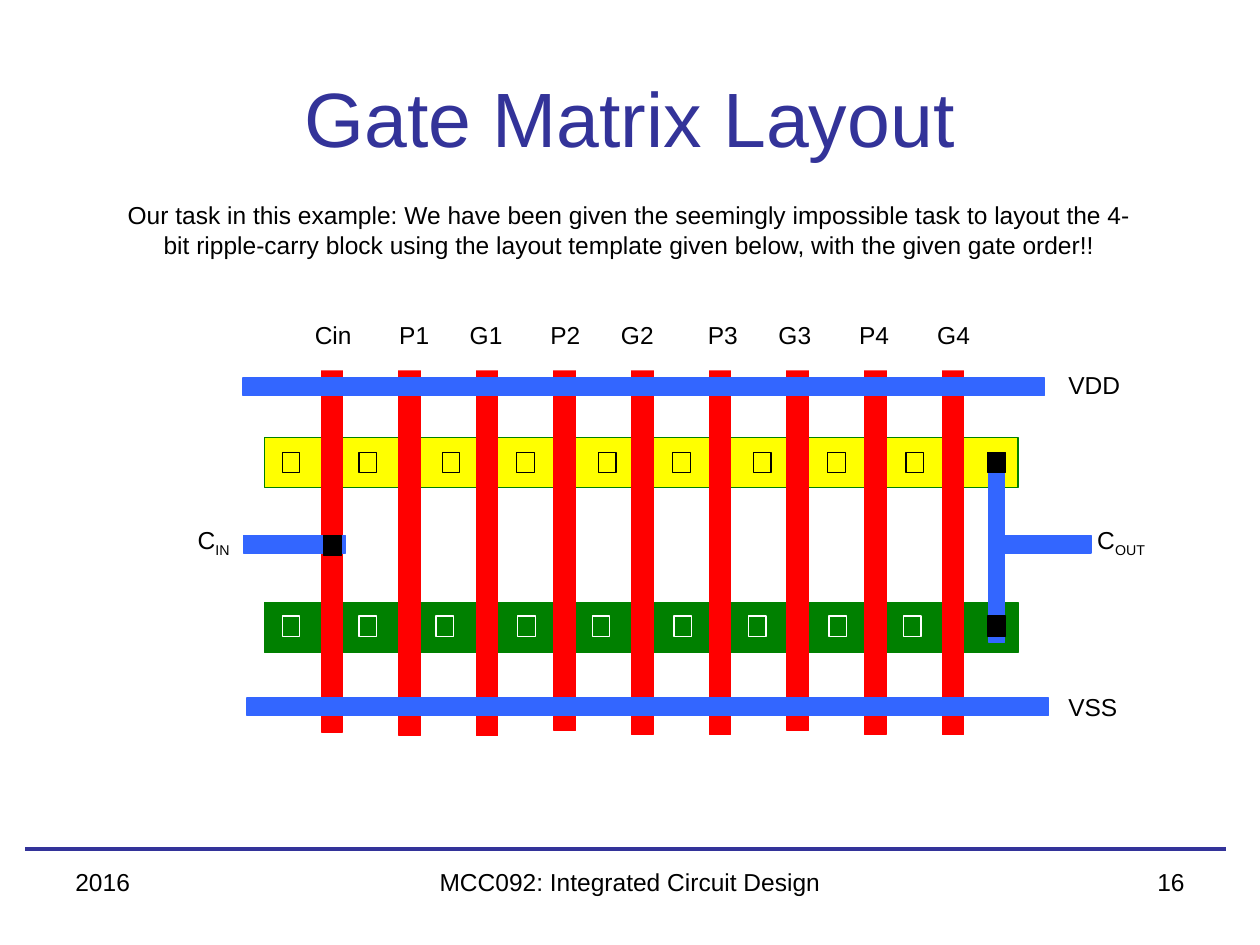
from dataclasses import dataclass

from lxml import etree
from pptx import Presentation
from pptx.dml.color import RGBColor
from pptx.enum import shapes, text
from pptx.oxml.ns import qn
from pptx.util import Inches, Pt

COLS, ROWS = 100, 75
NAVY, BLUE, RED, GREEN = "333399", "3366FF", "FF0000", "008000"
YELLOW, BLACK, WHITE = "FFFF00", "000000", "FFFFFF"

prs = Presentation()
prs.slide_width, prs.slide_height = Inches(10), Inches(7.5)
s = prs.slides.add_slide(prs.slide_layouts[6])


@dataclass
class Box:
    x: float
    y: float
    w: float
    h: float
    fill: str | None = None
    line: str | None = None


@dataclass
class Label:
    x: float
    y: float
    w: float
    h: float
    words: str
    sub: str = ""
    size: int = 14
    color: str = BLACK
    align: text.PP_ALIGN = text.PP_ALIGN.LEFT
    anchor: text.MSO_ANCHOR = text.MSO_ANCHOR.TOP


def rgb(value: str) -> RGBColor:
    return RGBColor.from_string(value)


def col(n: float) -> int:
    return round(prs.slide_width * n / COLS)


def row(n: float) -> int:
    return round(prs.slide_height * n / ROWS)


def draw_box(b: Box) -> None:
    sp = s.shapes.add_shape(shapes.MSO_SHAPE.RECTANGLE, col(b.x), row(b.y), col(b.w), row(b.h))
    sp.shadow.inherit = False
    if b.fill:
        sp.fill.solid()
        sp.fill.fore_color.rgb = rgb(b.fill)
    else:
        sp.fill.background()
    if b.line:
        sp.line.color.rgb = rgb(b.line)
        sp.line.width = Pt(0.75)
    else:
        sp.line.fill.background()


def draw_label(b: Label):
    sp = s.shapes.add_textbox(col(b.x), row(b.y), col(b.w), row(b.h))
    tf = sp.text_frame
    tf.word_wrap = True
    tf.vertical_anchor = b.anchor
    p = tf.paragraphs[0]
    p.text = b.words
    p.alignment = b.align
    if b.sub:
        r = p.add_run()
        r.text = b.sub
        r._r.get_or_add_rPr().set("baseline", "-25000")
    for r in p.runs:
        r.font.name = "Arial"
        r.font.size = Pt(b.size)
        r.font.color.rgb = rgb(b.color)
    return sp


def set_tabs(sp, stops: tuple[float, ...]) -> None:
    pPr = sp.text_frame.paragraphs[0]._p.get_or_add_pPr()
    tabs = etree.SubElement(pPr, qn("a:tabLst"))
    for stop in stops:
        etree.SubElement(tabs, qn("a:tab"), pos=str(col(stop)), algn="l")


def draw_rule(x1: float, x2: float, y: float) -> None:
    line = s.shapes.add_connector(shapes.MSO_CONNECTOR.STRAIGHT, col(x1), row(y), col(x2), row(y))
    line.line.color.rgb = rgb(NAVY)
    line.line.width = Pt(2.25)
    etree.SubElement(line._element.spPr, qn("a:effectLst"))


P_ROW, N_ROW = 35.9, 48.9
P_CONTACTS = (22.4, 28.5, 35.1, 41, 47.5, 53.4, 59.8, 65.7, 71.9)
N_CONTACTS = (22.4, 28.5, 34.6, 41.1, 47, 53.5, 59.4, 65.8, 71.7)
GATE_TOPS = (28.6, 28.9, 28.9, 28.5, 28.8, 28.8, 28.5, 28.8, 28.8)
GATE_NAMES = ("Cin", "P1", "G1", "P2", "G2", "P3", "G3", "P4", "G4")
GATE_TABS = (6.7, 12.3, 18.7, 24.3, 31.2, 36.8, 43.2, 49.4)
CENTER, RIGHT = text.PP_ALIGN.CENTER, text.PP_ALIGN.RIGHT


def contact(x: float, y: float, line: str, fill: str | None = None) -> Box:
    return Box(x, y, 1.4, 1.6, fill, line)


def wire(x: float, y: float, w: float, h: float = 1.4) -> Box:
    return Box(x, y, w, h, BLUE, BLUE)


diffusions = [Box(21, y, 59.8, 4, fill, GREEN) for y, fill in ((34.7, YELLOW), (47.8, GREEN))]
gates = [Box(25.5 + 6.16 * i, y, 1.7, 29.5, RED, RED) for i, y in enumerate(GATE_TOPS)]
rails = [wire(19.3, 30, 63.6), wire(19.6, 55.4, 63.6), wire(19.3, 42.5, 8.1)]
header = Box(24, 24.9, 65.4, 4.5, WHITE)
output = [wire(78.5, 42.5, 8.1), wire(78.5, 35.9, 1.2, 15.1)]
joined = [contact(x, y, BLACK, BLACK) for x, y in ((78.4, P_ROW), (25.7, 42.5), (78.4, N_ROW))]
p_contacts = [contact(x, P_ROW, BLACK) for x in P_CONTACTS]
n_contacts = [contact(x, N_ROW, WHITE) for x in N_CONTACTS]

draw_rule(2, 97.3, 67.4)
for box in (*diffusions, *gates, *rails, header, *output, *joined, *p_contacts, *n_contacts):
    draw_box(box)

set_tabs(draw_label(Label(24, 24.9, 65.4, 4.5, "\t".join(GATE_NAMES))), GATE_TABS)

for label in (
    Label(5, 3, 90, 12.5, "Gate Matrix Layout", size=44, color=NAVY, align=CENTER,
          anchor=text.MSO_ANCHOR.MIDDLE),
    Label(8.8, 15.4, 82.3, 7.7,
          "Our task in this example: We have been given the seemingly impossible task "
          "to layout the 4-bit ripple-carry block using the layout template given below, "
          "with the given gate order!!", align=CENTER),
    Label(83.8, 28.9, 7.9, 4.5, "VDD"),
    Label(83.8, 54.4, 7.9, 4.5, "VSS"),
    Label(14.7, 41.2, 7.9, 4.5, "C", "IN"),
    Label(86.1, 41.2, 7.9, 4.5, "C", "OUT"),
    Label(5, 68.3, 23.3, 5.2, "2016"),
    Label(31.9, 68.3, 36.2, 5.2, "MCC092: Integrated Circuit Design", align=CENTER),
    Label(71.7, 68.3, 23.3, 5.2, "16", align=RIGHT),
):
    draw_label(label)

prs.save("out.pptx")
